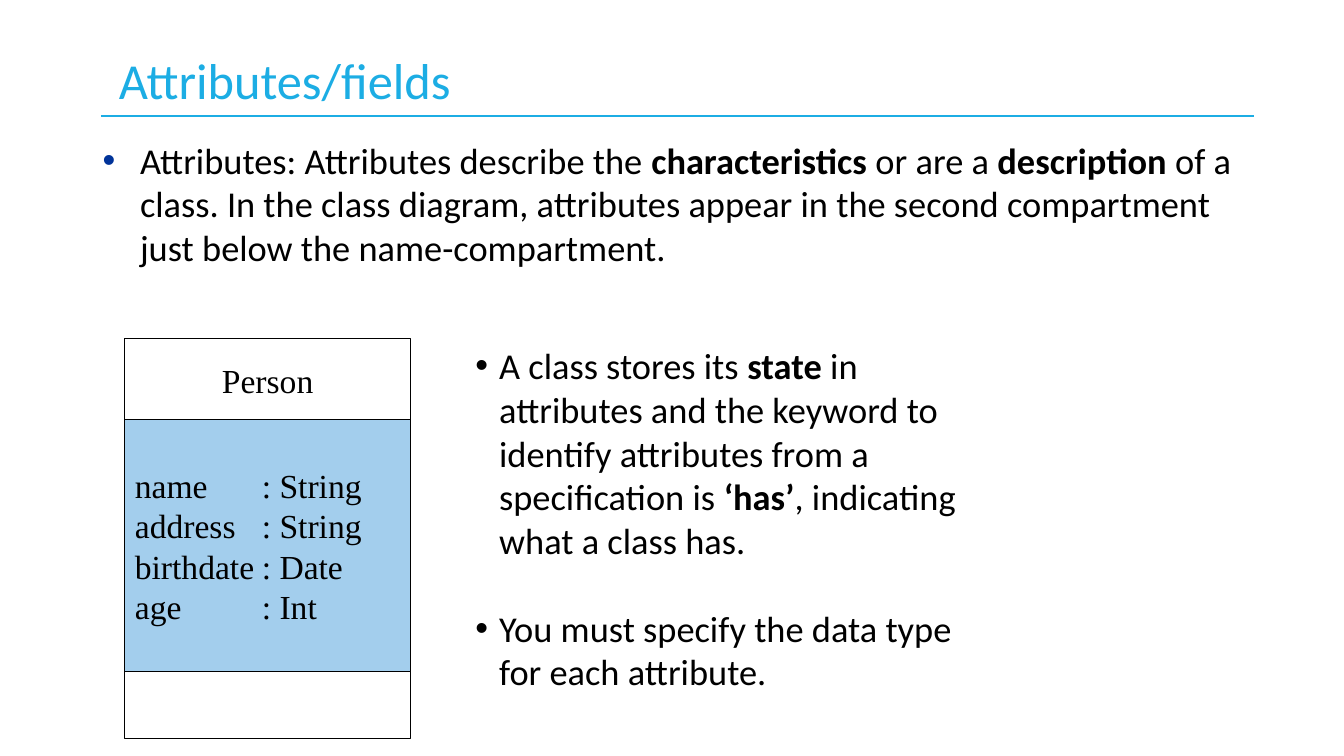
from dataclasses import dataclass
from lxml.etree import SubElement as Sub
from pptx import Presentation
from pptx.dml.color import RGBColor as RGB
from pptx.enum.shapes import MSO_CONNECTOR as Conn, MSO_SHAPE as Kind
from pptx.enum.text import MSO_ANCHOR as Anchor, MSO_AUTO_SIZE as Fit, PP_ALIGN as Align
from pptx.oxml.ns import qn
from pptx.slide import Slide
from pptx.util import Cm, Pt

SANS, SERIF = "Calibri", "Times New Roman"
BLUE, BLACK, WHITE = "1CADE4", "000000", "FFFFFF"


@dataclass
class Part:
    top: float
    height: float
    fill: str
    text: str
    align: Align


@dataclass
class Note:
    left: float
    top: float
    width: float
    height: float
    indent: float
    dot: str
    lines: list[str]
    fit: Fit = Fit.NONE


def paint(target, color: str) -> None:
    if hasattr(target, "solid"):
        target.solid()
        target = target.fore_color
    target.rgb = RGB.from_string(color)


def style(font, name: str, size: int, color: str) -> None:
    font.name, font.size = name, Pt(size)
    paint(font.color, color)


def draw_title(slide: Slide, text: str) -> None:
    title = slide.shapes.title
    title.left, title.top, title.width, title.height = Cm(2.74), Cm(1.12), Cm(23.29), Cm(1.47)
    frame = title.text_frame
    frame.text = text
    frame.auto_size = Fit.NONE
    frame.vertical_anchor = Anchor.TOP
    para = frame.paragraphs[0]
    para.alignment = Align.LEFT
    style(para.runs[0].font, SANS, 36, BLUE)


def draw_rule(slide: Slide) -> None:
    rule = slide.shapes.add_connector(Conn.STRAIGHT, Cm(2.54), Cm(2.92), Cm(31.6), Cm(2.92))
    paint(rule.line.fill, BLUE)
    rule.line.width = Pt(1)
    Sub(rule._element.spPr, qn("a:effectLst"))


def draw_part(slide: Slide, part: Part) -> None:
    box = slide.shapes.add_shape(Kind.RECTANGLE, Cm(3.15), Cm(part.top), Cm(7.19), Cm(part.height))
    box.shadow.inherit = False
    paint(box.fill, part.fill)
    paint(box.line.fill, BLACK)
    box.line.width = Pt(0.75)
    frame = box.text_frame
    frame.vertical_anchor = Anchor.MIDDLE
    frame.text = part.text
    for para in frame.paragraphs:
        para.alignment = part.align
        for run in para.runs:
            style(run.font, SERIF, 24, BLACK)
        if "\t" in para.text:
            tabs = Sub(para._p.get_or_add_pPr(), qn("a:tabLst"))
            Sub(tabs, qn("a:tab"), pos=str(Cm(3.2)), algn="l")


def draw_note(slide: Slide, note: Note) -> None:
    box = slide.shapes.add_textbox(Cm(note.left), Cm(note.top), Cm(note.width), Cm(note.height))
    frame = box.text_frame
    frame.word_wrap = True
    frame.auto_size = note.fit
    for row, line in enumerate(note.lines):
        para = frame.add_paragraph() if row else frame.paragraphs[0]
        if row:
            para.space_before = Pt(31.5)
        props = para._p.get_or_add_pPr()
        props.set("marL", str(Cm(note.indent)))
        props.set("indent", str(-Cm(note.indent)))
        Sub(Sub(props, qn("a:buClr")), qn("a:srgbClr"), val=note.dot)
        Sub(props, qn("a:buFont"), typeface="Arial")
        Sub(props, qn("a:buChar"), char="•")
        for part, text in enumerate(line.split("*")):
            run = para.add_run()
            run.text = text
            style(run.font, SANS, 26, BLACK)
            run.font.bold = part % 2 == 1


PARTS = [
    Part(8.53, 2.11, WHITE, "Person", Align.CENTER),
    Part(10.57, 6.35, "A3CEED",
         "name\t: String\naddress\t: String\nbirthdate\t: Date\nage\t: Int", Align.LEFT),
    Part(16.92, 1.7, WHITE, "", Align.LEFT),
]
NOTES = [
    Note(2.34, 3.35, 29.18, 3.71, 0.94, "003399", [
        "Attributes: Attributes describe the *characteristics* or are a *description* of a class. "
        "In the class diagram, attributes appear in the second compartment "
        "just below the name-compartment."]),
    Note(11.73, 8.53, 13.46, 9.14, 0.6, BLACK, [
        "A class stores its *state* in attributes and the keyword to identify attributes "
        "from a specification is *‘has’*, indicating what a class has.",
        "You must specify the data type for each attribute."], Fit.SHAPE_TO_FIT_TEXT),
]


def main() -> None:
    deck = Presentation()
    deck.slide_width, deck.slide_height = Cm(33.87), Cm(19.05)
    slide = deck.slides.add_slide(deck.slide_layouts[5])
    draw_rule(slide)
    draw_title(slide, "Attributes/fields")
    for part in PARTS:
        draw_part(slide, part)
    for note in NOTES:
        draw_note(slide, note)
    deck.save("out.pptx")


if __name__ == "__main__":
    main()
